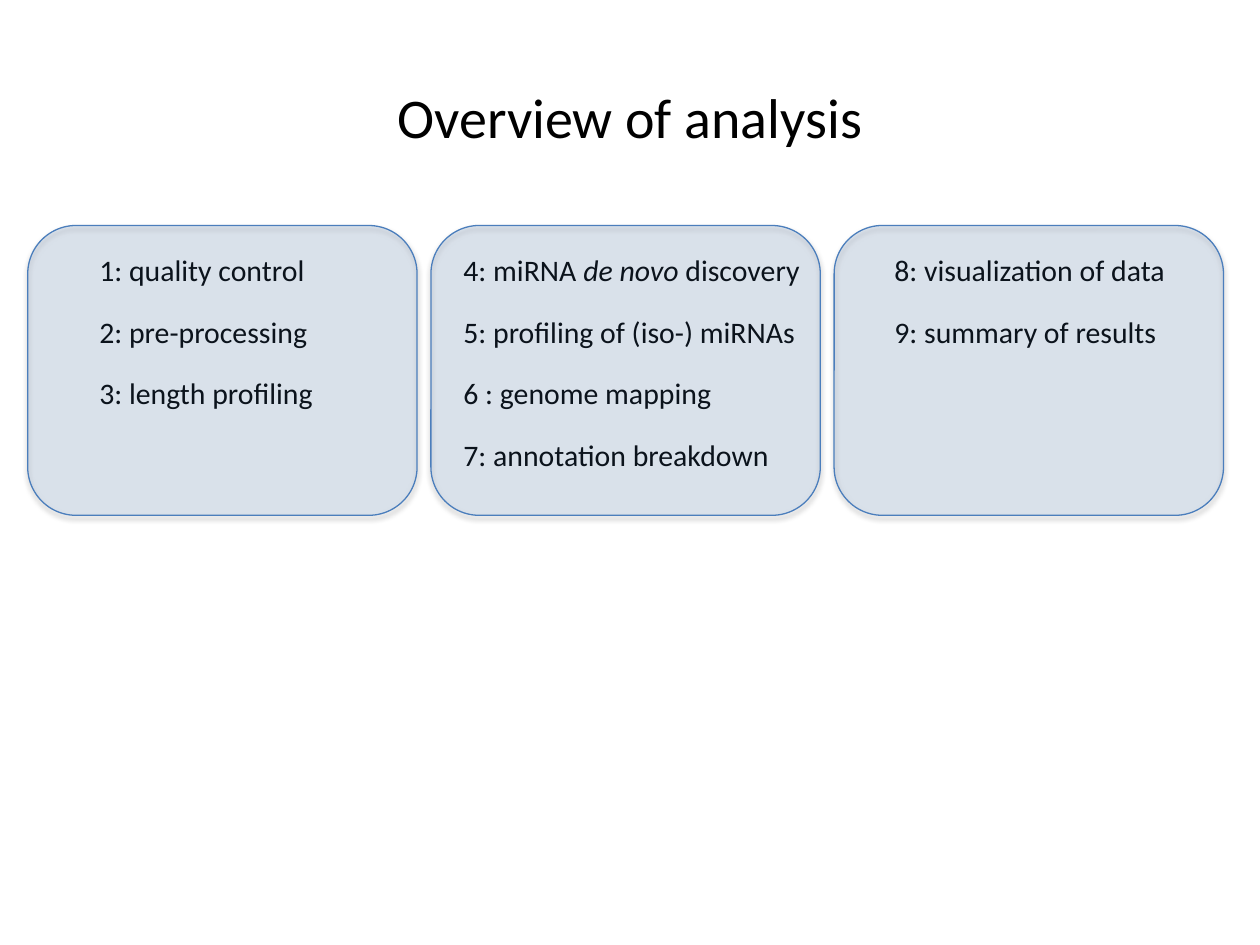
import pptx
import pptx.util
import pptx.dml.color
import pptx.enum.shapes
import pptx.enum.text
import pptx.oxml
import pptx.oxml.ns
from lxml import etree

Inches = pptx.util.Inches
Pt = pptx.util.Pt
BLACK = pptx.dml.color.RGBColor(0x00, 0x00, 0x00)
PANEL_BLUE = pptx.dml.color.RGBColor(0x4F, 0x81, 0xBD)
PANEL_EDGE = pptx.dml.color.RGBColor(0x4B, 0x7E, 0xBC)
FONT = "Calibri"

PANEL_LEFT, PANEL_TOP, PANEL_WIDTH, PANEL_HEIGHT = 0.22, 1.79, 3.09, 2.3
PANEL_GAP = 0.11
STEPS_TOP = 1.7

STAGES = [
    ((0.47, 2.23, 1.83), [
        [("1: quality control", False)],
        [("2: pre-processing", False)],
        [("3: length profiling", False)],
    ]),
    ((0.16, 2.93, 2.82), [
        [("4: miRNA ", False), ("de novo ", True), ("discovery", False)],
        [("5: profiling of (iso-) miRNAs", False)],
        [("6 : genome mapping", False)],
        [("7: annotation breakdown", False)],
    ]),
    ((0.38, 2.49, 1.51), [
        [("8: visualization of data", False)],
        [("9: summary of results", False)],
    ]),
]


def add_run(paragraph, text, size, italic=False):
    """Append one formatted run to a paragraph."""
    run = paragraph.add_run()
    run.text = text
    run.font.name = FONT
    run.font.size = Pt(size)
    run.font.italic = italic
    run.font.color.rgb = BLACK


def add_title(slide, left, top, width, height):
    """Place and format the title placeholder."""
    title = slide.shapes.title
    title.left, title.top = Inches(left), Inches(top)
    title.width, title.height = Inches(width), Inches(height)
    title.text_frame.vertical_anchor = pptx.enum.text.MSO_ANCHOR.MIDDLE
    paragraph = title.text_frame.paragraphs[0]
    paragraph.alignment = pptx.enum.text.PP_ALIGN.CENTER
    add_run(paragraph, "Overview of analysis", 32)


def add_steps(slide, left, top, width, height, steps):
    """Add the list of analysis steps, one paragraph each."""
    box = slide.shapes.add_textbox(Inches(left), Inches(top), Inches(width), Inches(height))
    frame = box.text_frame
    frame.word_wrap = True
    frame.margin_top = Inches(0.3)
    for index, runs in enumerate(steps):
        paragraph = frame.add_paragraph() if index else frame.paragraphs[0]
        paragraph.space_after = Pt(14.7)
        for text, italic in runs:
            add_run(paragraph, text, 17, italic)


def add_panel(slide, left, top, width, height):
    """Add a translucent rounded panel with a soft shadow below it."""
    panel = slide.shapes.add_shape(
        pptx.enum.shapes.MSO_SHAPE.ROUNDED_RECTANGLE,
        Inches(left), Inches(top), Inches(width), Inches(height))
    panel.fill.solid()
    panel.fill.fore_color.rgb = PANEL_BLUE
    panel.line.color.rgb = PANEL_EDGE
    panel.line.width = Pt(0.75)
    panel.shadow.inherit = False
    qn = pptx.oxml.ns.qn
    properties = panel.element.spPr
    fill_color = properties.find(qn("a:solidFill")).find(qn("a:srgbClr"))
    etree.SubElement(fill_color, qn("a:alpha"), val="15000")
    shadow = etree.SubElement(
        properties.find(qn("a:effectLst")), qn("a:outerShdw"),
        blurRad=str(Pt(3.1)), dist=str(Pt(1.8)), dir="5400000", rotWithShape="0")
    shadow_color = etree.SubElement(shadow, qn("a:srgbClr"), val=str(BLACK))
    etree.SubElement(shadow_color, qn("a:alpha"), val="35000")


def add_stage(slide, left, top, width, height, steps_box, steps):
    """Add one stage: its steps with the tinted panel over them."""
    offset, steps_width, steps_height = steps_box
    add_steps(slide, left + offset, STEPS_TOP, steps_width, steps_height, steps)
    add_panel(slide, left, top, width, height)


def main():
    """Build the overview slide and save it."""
    presentation = pptx.Presentation()
    presentation.slide_width = Inches(10)
    presentation.slide_height = Inches(7.5)
    slide = presentation.slides.add_slide(presentation.slide_layouts[5])
    add_title(slide, 0.5, 0.3, 9, 1.25)
    for index, (steps_box, steps) in enumerate(STAGES):
        left = PANEL_LEFT + index * (PANEL_WIDTH + PANEL_GAP)
        add_stage(slide, left, PANEL_TOP, PANEL_WIDTH, PANEL_HEIGHT, steps_box, steps)
    presentation.save("out.pptx")


if __name__ == "__main__":
    main()
